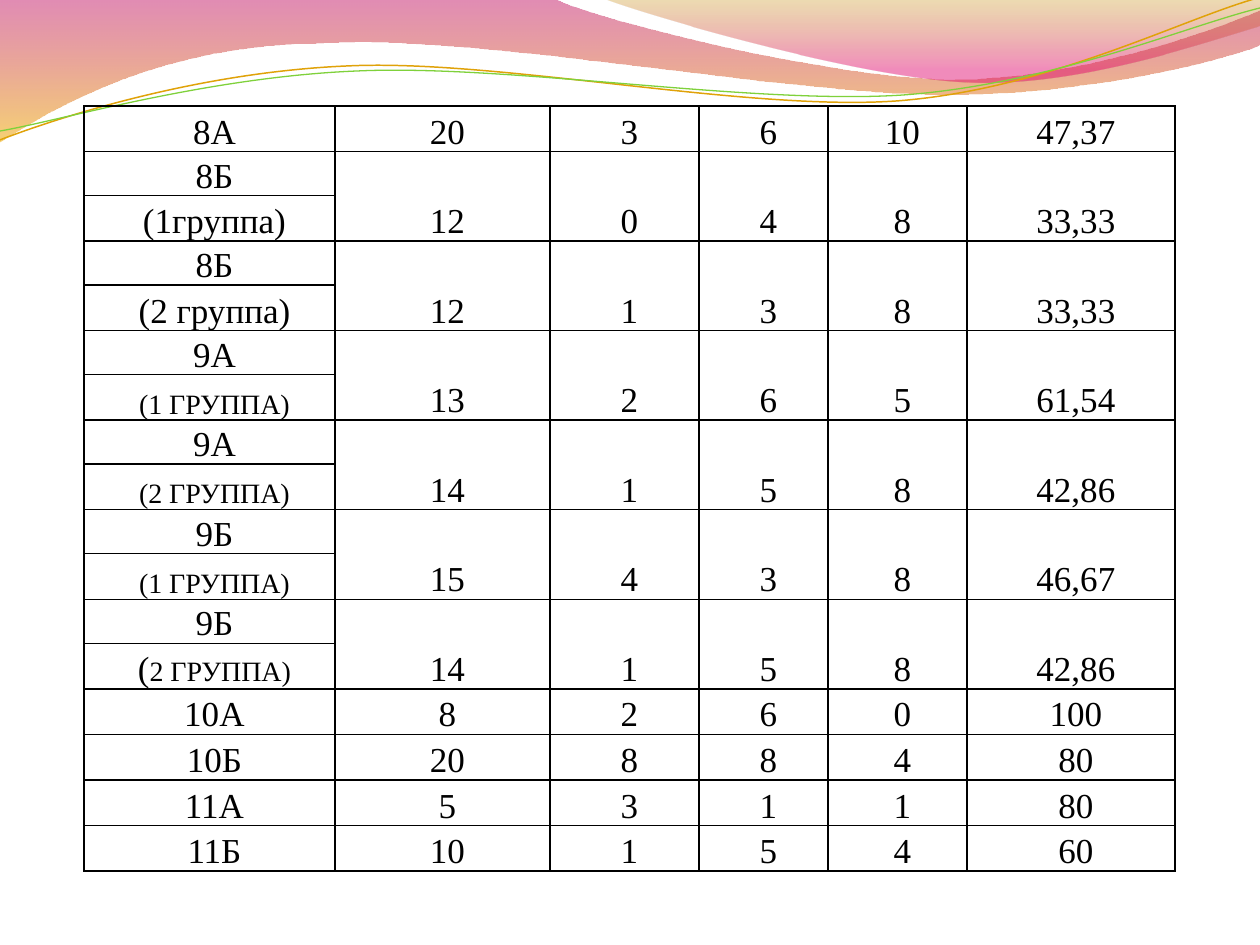
import math

import pptx
import pptx.dml.color
import pptx.enum.text
import pptx.oxml
import pptx.oxml.ns
import pptx.util

PX = 914400 / 126
FONT = "Times New Roman"
LARGE, SMALL = 20, 16
COLORS = {
    "text": "000000", "crimson": "BD0059", "amber": "F0AB00",
    "olive": "C38B00", "pink": "E1006B", "gold": "E0A209", "green": "7FD13B",
}

# class, second line as (text, size) runs or None, then the row's figures
RESULTS = [
    ("8А", None, ("20", "3", "6", "10", "47,37")),
    ("8Б", [("(1группа)", LARGE)], ("12", "0", "4", "8", "33,33")),
    ("8Б", [("(2 группа)", LARGE)], ("12", "1", "3", "8", "33,33")),
    ("9А", [("(1 ГРУППА)", SMALL)], ("13", "2", "6", "5", "61,54")),
    ("9А", [("(2 ГРУППА)", SMALL)], ("14", "1", "5", "8", "42,86")),
    ("9Б", [("(1 ГРУППА)", SMALL)], ("15", "4", "3", "8", "46,67")),
    ("9Б", [("(", LARGE), ("2 ГРУППА)", SMALL)], ("14", "1", "5", "8", "42,86")),
    ("10А", None, ("8", "2", "6", "0", "100")),
    ("10Б", None, ("20", "8", "8", "4", "80")),
    ("11А", None, ("5", "3", "1", "1", "80")),
    ("11Б", None, ("10", "1", "5", "4", "60")),
]
TABLE_LEFT, TABLE_TOP = 84, 106
COLUMN_WIDTHS = [251, 215, 149, 129, 139, 208]
SINGLE_HEIGHTS, PAIR_HEIGHTS = [45.6], [44, 45.6]

# Outlines: a start point, then segments of one point (line) or three (Bezier curve).
# Gradient stops: position, colour, opacity in percent.
BANDS = [
    ((0, -1), [
        [(554, -1)],
        [(600, 21), (837, 79), (955, 79)],
        [(1075, 79), (1207, 33), (1260, 11)],
        [(1261, 45)],
        [(1239, 55), (1096, 96), (940, 94)],
        [(783, 94), (481, 35), (324, 43)],
        [(163, 44), (58, 105), (-1, 142)],
    ], [(0, "crimson", 45), (1, "amber", 55)]),
    ((604, -1), [
        [(641, 14), (859, 78), (969, 82)],
        [(1079, 87), (1211, 40), (1260, 26)],
        [(1260, 0)],
    ], [(0, "olive", 30), (0.8, "pink", 45)]),
]
# Ribbons are tilted about a pivot; their points are given as they appear.
TILT = -2.7
RIBBONS = [
    ((0, 140), [
        [(60, 117), (199, 72), (349, 66)],
        [(498, 59), (747, 112), (898, 101)],
        [(1050, 89), (1182, 19), (1258, -2)],
    ], (629, 72), "gold", 0.85),
    ((0, 131), [
        [(59, 121), (207, 77), (357, 71)],
        [(508, 64), (752, 105), (903, 95)],
        [(1053, 84), (1186, 26), (1260, 8)],
    ], (629, 74), "green", 0.75),
]


def px(length):
    return pptx.util.Emu(round(length * PX))


def rgb(name):
    return pptx.dml.color.RGBColor.from_string(COLORS[name])


def untilt(point, pivot):
    """Return the point as it lies before the ribbon is tilted."""
    angle = math.radians(-TILT)
    x, y = point[0] - pivot[0], point[1] - pivot[1]
    return (pivot[0] + x * math.cos(angle) - y * math.sin(angle),
            pivot[1] + x * math.sin(angle) + y * math.cos(angle))


def add_outline(slide, start, segments, close):
    """Add a freeform, joining the points of each three-point segment into a curve."""
    builder = slide.shapes.build_freeform(px(start[0]), px(start[1]))
    points = [(px(x), px(y)) for segment in segments for x, y in segment]
    builder.add_line_segments(points, close=close)
    outline = builder.convert_to_shape()
    outline.shadow.inherit = False
    lines = iter(list(outline.element.iter(pptx.oxml.ns.qn("a:lnTo"))))
    for segment in segments:
        nodes = [next(lines) for _ in segment]
        if len(nodes) == 3:
            curve = pptx.oxml.parse_xml(f'<a:cubicBezTo {pptx.oxml.ns.nsdecls("a")}/>')
            nodes[0].addprevious(curve)
            for node in nodes:
                curve.append(node[0])
                node.getparent().remove(node)
    return outline


def add_band(slide, start, segments, stops):
    band = add_outline(slide, start, segments, close=True)
    band.line.fill.background()
    band.fill.gradient()
    band.fill.gradient_angle = 270
    for stop, (position, color, _) in zip(band.fill.gradient_stops, stops):
        stop.position = position
        stop.color.rgb = rgb(color)
    for color_node, (_, _, opacity) in zip(
            band.element.spPr.iter(pptx.oxml.ns.qn("a:srgbClr")), stops):
        color_node.append(pptx.oxml.parse_xml(
            f'<a:alpha {pptx.oxml.ns.nsdecls("a")} val="{opacity * 1000}"/>'))


def add_ribbon(slide, start, segments, pivot, color, width):
    level = [[untilt(point, pivot) for point in segment] for segment in segments]
    ribbon = add_outline(slide, untilt(start, pivot), level, close=False)
    ribbon.rotation = TILT
    ribbon.fill.background()
    ribbon.line.color.rgb = rgb(color)
    ribbon.line.width = pptx.util.Pt(width)


def format_cell(cell):
    properties = cell._tc.get_or_add_tcPr()
    for side in ("lnL", "lnR", "lnT", "lnB"):
        properties.append(pptx.oxml.parse_xml(
            f'<a:{side} {pptx.oxml.ns.nsdecls("a")} w="12700"><a:solidFill>'
            f'<a:srgbClr val="{COLORS["text"]}"/></a:solidFill></a:{side}>'))
    cell.fill.background()
    cell.margin_left, cell.margin_right = px(11), px(1)
    cell.margin_top, cell.margin_bottom = px(1), 0
    cell.vertical_anchor = pptx.enum.text.MSO_ANCHOR.BOTTOM


def write(cell, runs):
    paragraph = cell.text_frame.paragraphs[0]
    paragraph.alignment = pptx.enum.text.PP_ALIGN.CENTER
    paragraph.font.name = FONT
    paragraph.font.color.rgb = rgb("text")
    paragraph.font.size = pptx.util.Pt(runs[0][1])
    for text, size in runs:
        run = paragraph.add_run()
        run.text = text
        if size != runs[0][1]:
            run.font.size = pptx.util.Pt(size)


def add_results(slide):
    heights = [height for _, group, _ in RESULTS
               for height in (PAIR_HEIGHTS if group else SINGLE_HEIGHTS)]
    table = slide.shapes.add_table(
        len(heights), len(COLUMN_WIDTHS), px(TABLE_LEFT), px(TABLE_TOP),
        px(sum(COLUMN_WIDTHS)), px(sum(heights))).table
    table.first_row = table.horz_banding = False
    for column, width in zip(table.columns, COLUMN_WIDTHS):
        column.width = px(width)
    for row, height in zip(table.rows, heights):
        row.height = px(height)
    for cell in table.iter_cells():
        format_cell(cell)

    top = 0
    for class_name, group, figures in RESULTS:
        write(table.cell(top, 0), [(class_name, LARGE)])
        for column, figure in enumerate(figures, start=1):
            write(table.cell(top, column), [(figure, LARGE)])
            if group:
                table.cell(top, column).merge(table.cell(top + 1, column))
        if group:
            write(table.cell(top + 1, 0), group)
        top += 2 if group else 1


def main():
    deck = pptx.Presentation()
    deck.slide_width, deck.slide_height = px(1260), px(945)
    slide = deck.slides.add_slide(deck.slide_layouts[6])
    for band in BANDS:
        add_band(slide, *band)
    for ribbon in RIBBONS:
        add_ribbon(slide, *ribbon)
    add_results(slide)
    deck.save("out.pptx")


if __name__ == "__main__":
    main()
